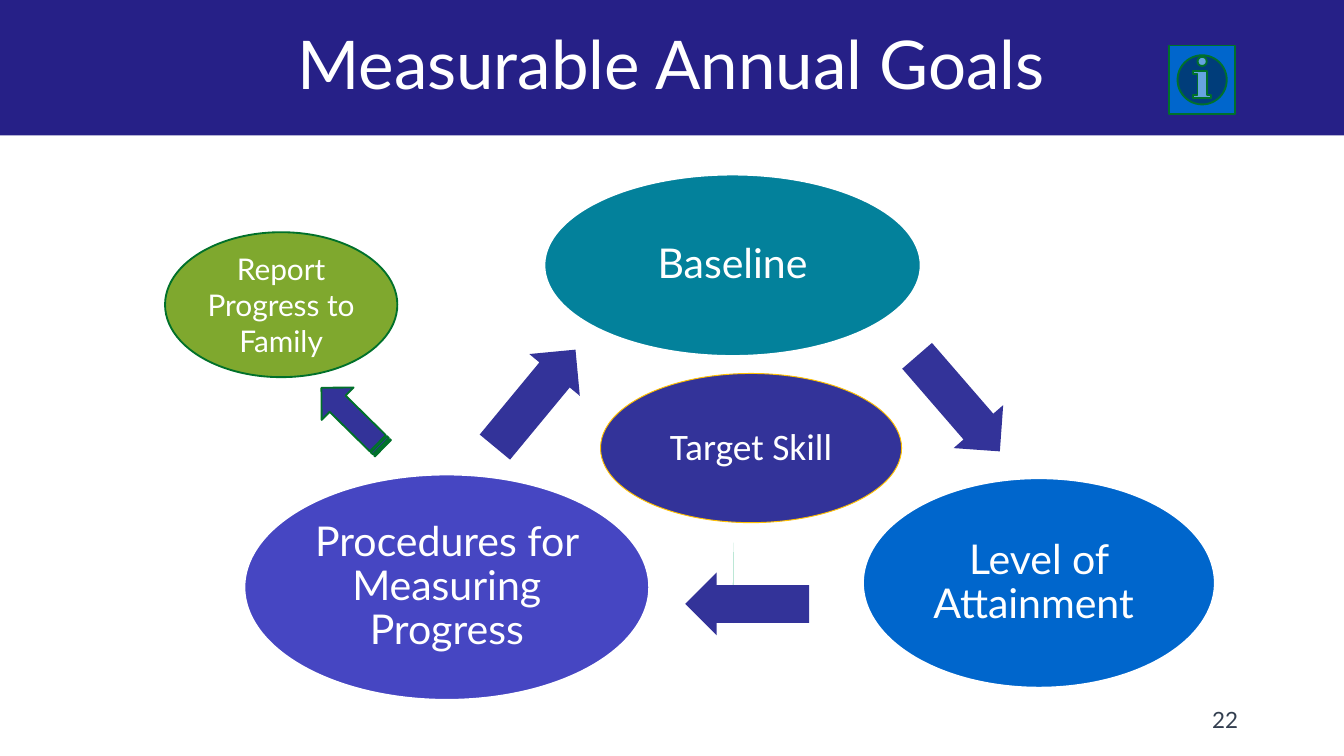
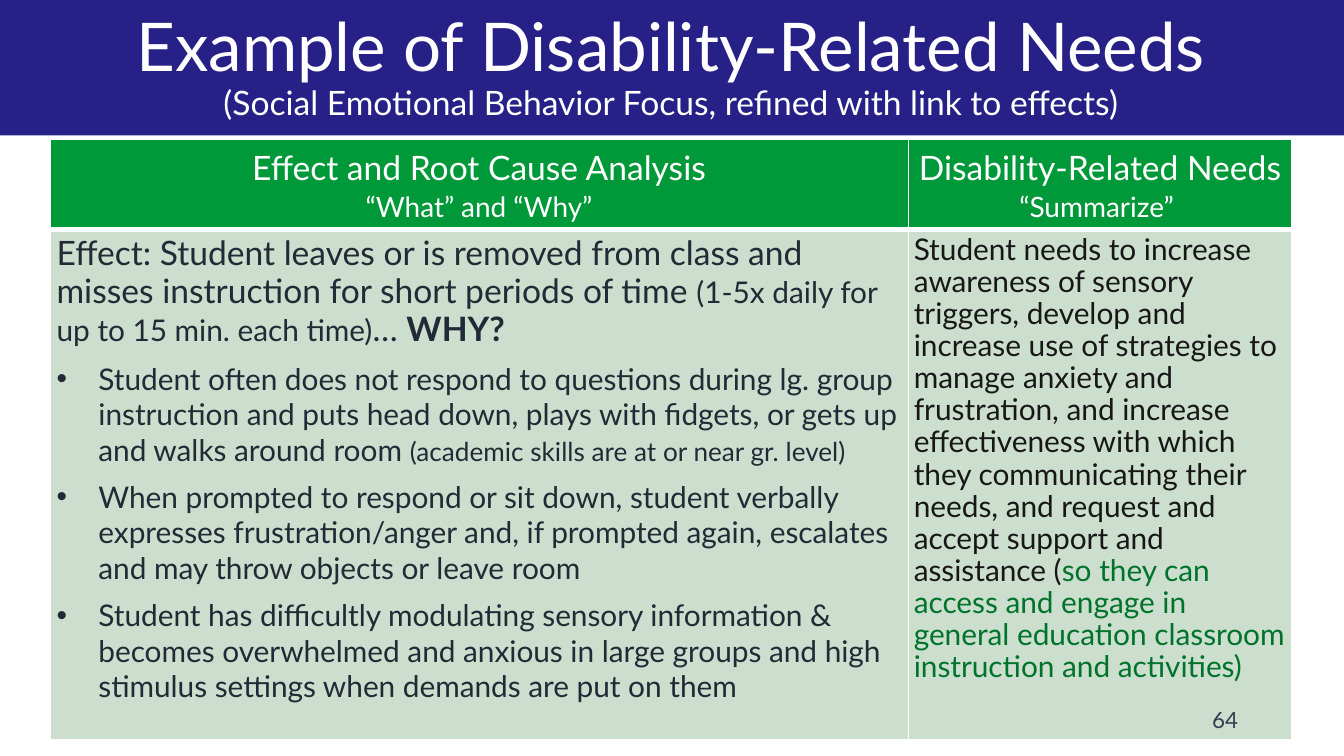
from lxml import etree
from pptx import Presentation
from pptx.dml.color import RGBColor
from pptx.enum.shapes import MSO_SHAPE as SHAPE
from pptx.enum.text import MSO_ANCHOR as ANCHOR, MSO_AUTO_SIZE as AUTO, PP_ALIGN as ALIGN
from pptx.oxml import parse_xml
from pptx.oxml.ns import nsdecls, qn
from pptx.util import Cm, Pt

WHITE = RGBColor(0xFF, 0xFF, 0xFF)
NAVY = RGBColor(0x26, 0x20, 0x87)
INDIGO = RGBColor(0x33, 0x33, 0x99)
VIOLET = RGBColor(0x46, 0x46, 0xC2)
BLUE = RGBColor(0x00, 0x66, 0xCC)
TEAL = RGBColor(0x03, 0x81, 0x9B)
MINT = RGBColor(0x43, 0xBB, 0x8D)
LIME = RGBColor(0x7F, 0xA8, 0x2E)
DARK_GREEN = RGBColor(0x00, 0x71, 0x2A)
GOLD = RGBColor(0xFF, 0xC0, 0x00)
HEADER_GREEN = RGBColor(0x00, 0x99, 0x39)
PALE_GREEN = RGBColor(0xCC, 0xDE, 0xCE)
TEXT_GREEN = RGBColor(0x00, 0x73, 0x2B)
SLATE = RGBColor(0x33, 0x3F, 0x50)
INK = RGBColor(0x22, 0x2A, 0x35)
BLACK = RGBColor(0x18, 0x17, 0x17)
FONT = "Lato"


def write(p, parts, align=None, spacing=None):
    """Add (text, size, colour) runs to a paragraph."""
    p.alignment, p.line_spacing = align, spacing
    for text, size, color in parts:
        r = p.add_run()
        r.text = text
        r.font.name, r.font.size, r.font.color.rgb = FONT, Pt(size), color


def style(sp, fill, line=None, width=1):
    sp.shadow.inherit = False
    sp.fill.solid()
    sp.fill.fore_color.rgb = fill
    if line is None:
        sp.line.fill.background()
    else:
        sp.line.color.rgb, sp.line.width = line, Pt(width)


prs = Presentation()
prs.slide_width, prs.slide_height = Cm(25.4), Cm(14.29)

# Both slides: band, title, page number
pages = [
    ([("Measurable Annual Goals", 36, WHITE)], "22"),
    ([("Example of Disability-Related Needs\v", 36, WHITE),
      ("(Social Emotional Behavior Focus, refined with link to effects)", 18, WHITE)], "64"),
]
slides, numbers = [], []
for heading, number in pages:
    s = prs.slides.add_slide(prs.slide_layouts[5])
    slides.append(s)
    band = s.shapes.add_shape(SHAPE.RECTANGLE, 0, 0, prs.slide_width, Cm(2.56))
    style(band, NAVY)
    title = s.shapes.title
    title.element.addprevious(band.element)
    title.left, title.top, title.width, title.height = Cm(1.73), Cm(0.02), Cm(21.9), Cm(2.54)
    tf = title.text_frame
    tf.auto_size, tf.vertical_anchor = AUTO.NONE, ANCHOR.MIDDLE
    p = tf.paragraphs[0]
    p.text = "".join(text for text, size, color in heading)
    p.alignment, p.line_spacing = ALIGN.CENTER, 0.9
    for r, (text, size, color) in zip(p.runs, heading):
        r.font.name, r.font.size, r.font.color.rgb = FONT, Pt(size), color

    box = s.shapes.add_textbox(Cm(17.93), Cm(13.23), Cm(5.72), Cm(0.76))
    numbers.append(box)
    tf = box.text_frame
    tf.word_wrap, tf.vertical_anchor = True, ANCHOR.MIDDLE
    write(tf.paragraphs[0], [(number, 12, SLATE)], ALIGN.RIGHT)

# Slide 1: goal cycle
s = slides[0]
x, y = 13.86, 10.26
outline = s.shapes.build_freeform(Cm(x), Cm(y))
outline.add_line_segments([(Cm(x), Cm(y + 1.52)), (Cm(x - 0.01), Cm(y + 1.22))])
style(outline.convert_to_shape(), MINT)

info = s.shapes.add_shape(SHAPE.ACTION_BUTTON_INFORMATION, Cm(22.1), Cm(0.86), Cm(1.24), Cm(1.3))
style(info, BLUE, DARK_GREEN)

ovals = [  # text, left, top, width, height, fill, line, line width, size, font, spacing
    ("Baseline", 10.29, 3.3, 7.11, 3.43, TEAL, WHITE, 1, 22, FONT, 0.9),
    ("Level of Attainment ", 16.31, 9.04, 6.65, 3.96, BLUE, WHITE, 1, 22, FONT, 0.9),
    ("Procedures for Measuring Progress", 4.62, 8.97, 7.65, 4.26, VIOLET, WHITE, 1, 22, FONT, 0.9),
    ("Target Skill", 11.35, 7.06, 5.69, 2.82, INDIGO, GOLD, 0.5, 20, "Calibri", 0.9),
    ("Report Progress to Family", 3.12, 4.39, 4.39, 2.74, LIME, DARK_GREEN, 1, 16, FONT, 1.0),
]
for text, left, top, w, h, fill, line, width, size, font, spacing in ovals:
    sp = s.shapes.add_shape(SHAPE.OVAL, Cm(left), Cm(top), Cm(w), Cm(h))
    style(sp, fill, line, width)
    tf = sp.text_frame
    tf.word_wrap, tf.vertical_anchor = True, ANCHOR.MIDDLE
    tf.margin_left = tf.margin_right = tf.margin_top = tf.margin_bottom = Cm(0.13)
    p = tf.paragraphs[0]
    write(p, [(text, size, WHITE)], ALIGN.CENTER, spacing)
    p.runs[0].font.name = font

arrows = [  # left, top, width, height, rotation
    (12.95, 10.82, 2.34, 1.19, 180),
    (8.92, 6.91, 2.39, 1.24, 309.6),
    (16.92, 7.01, 2.39, 1.24, 49.1),
]
for left, top, w, h, angle in arrows:
    sp = s.shapes.add_shape(SHAPE.RIGHT_ARROW, Cm(left), Cm(top), Cm(w), Cm(h))
    sp.adjustments[0], sp.adjustments[1] = 0.6, 0.5
    sp.rotation = angle
    style(sp, INDIGO)

report = s.shapes.add_shape(SHAPE.STRIPED_RIGHT_ARROW, Cm(5.84), Cm(7.47), Cm(1.63), Cm(0.86))
report.rotation = 224.5
style(report, INDIGO, DARK_GREEN)

# Slide 2: analysis table
s = slides[1]
frame = s.shapes.add_table(2, 2, Cm(0.94), Cm(2.64), Cm(23.47), Cm(11.33))
numbers[1].element.addprevious(frame.element)
table = frame.table
table.first_row = table.horz_banding = False
table.columns[0].width, table.columns[1].width = Cm(16.23), Cm(7.24)
table.rows[0].height, table.rows[1].height = Cm(1.68), Cm(9.65)

headers = [("Effect and Root Cause Analysis", "“What” and “Why”"),
           ("Disability-Related Needs", "“Summarize” ")]
for col, (head, sub) in enumerate(headers):
    tf = table.cell(0, col).text_frame
    write(tf.paragraphs[0], [(head, 18, WHITE)], ALIGN.CENTER, 1.07)
    write(tf.add_paragraph(), [(sub, 15, WHITE)], ALIGN.CENTER, 1.07)

tf = table.cell(1, 0).text_frame
p = tf.paragraphs[0]
write(p, [
    ("Effect: Student leaves or is removed from class and misses instruction "
     "for short periods of time ", 18, INK),
    ("(1-5x daily for up to 15 min. each time)", 16, INK),
    ("… ", 18, INK),
    ("WHY?", 18, INK),
], spacing=0.95)
p.runs[-1].font.bold = True

causes = [
    [("Student often does not respond to questions during lg. group instruction and "
      "puts head down, plays with fidgets, or gets up and walks around room ", 16, INK),
     ("(academic skills are at or near gr. level)", 14, INK)],
    [("When prompted to respond or sit down, student verbally expresses frustration/anger "
      "and, if prompted again, escalates and may throw objects or leave room", 16, INK)],
    [("Student has difficultly modulating sensory information & becomes overwhelmed and "
      "anxious in large groups and high stimulus settings when demands are put on them", 16, INK)],
]
for parts in causes:
    p = tf.add_paragraph()
    pPr = p._p.get_or_add_pPr()
    pPr.set("marL", str(Cm(0.79)))
    pPr.set("indent", str(-Cm(0.79)))
    etree.SubElement(pPr, qn("a:buFont")).set("typeface", "Arial")
    etree.SubElement(pPr, qn("a:buChar")).set("char", "•")
    p.space_before = Pt(6)
    write(p, parts)

write(table.cell(1, 1).text_frame.paragraphs[0], [
    ("Student needs to increase awareness of sensory triggers, develop and increase use of "
     "strategies to manage anxiety and frustration, and increase effectiveness with which they "
     "communicating their needs, and request and accept support and assistance (", 16, BLACK),
    ("so they can access and engage in general education classroom instruction "
     "and activities)", 16, TEXT_GREEN),
], spacing=0.9)

# Cell fills, margins and white borders
for row, fill in enumerate((HEADER_GREEN, PALE_GREEN)):
    for col, side in enumerate((0.13, 0.1)):
        cell = table.cell(row, col)
        cell.margin_left = cell.margin_right = Cm(side)
        cell.margin_top = cell.margin_bottom = Cm(0.1)
        tcPr = cell._tc.get_or_add_tcPr()
        for edge in ("lnL", "lnR", "lnT", "lnB"):
            thick = (row, edge) in ((0, "lnB"), (1, "lnT"))
            tcPr.append(parse_xml(
                f'<a:{edge} {nsdecls("a")} w="{Pt(3 if thick else 1)}"><a:solidFill>'
                f'<a:srgbClr val="{WHITE}"/></a:solidFill></a:{edge}>'))
        cell.fill.solid()
        cell.fill.fore_color.rgb = fill

prs.save("out.pptx")
